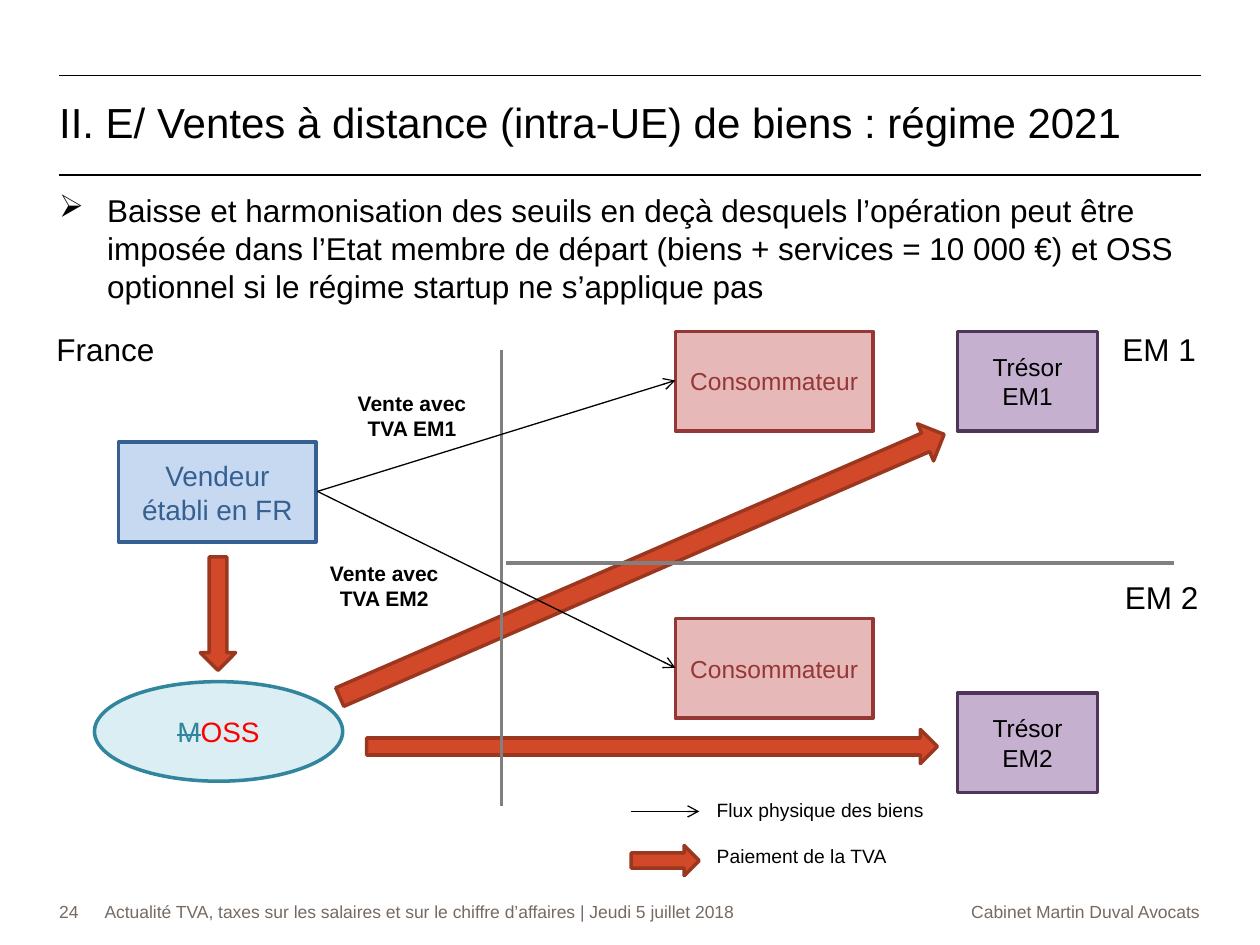
from collections import namedtuple

from lxml.etree import SubElement
from pptx import Presentation
from pptx.dml.color import RGBColor
from pptx.enum.shapes import MSO_CONNECTOR as LINK, MSO_SHAPE as SHAPE
from pptx.enum.text import MSO_ANCHOR as ANCHOR, PP_ALIGN as ALIGN
from pptx.oxml.ns import qn
from pptx.util import Inches, Pt

Box = namedtuple("Box", "left top width height")
Look = namedtuple("Look", "fill line ink size")

BLACK = RGBColor(0x00, 0x00, 0x00)
GREY = RGBColor(0x80, 0x80, 0x80)
FOOTER = RGBColor(0x76, 0x6A, 0x62)
RED = RGBColor(0xFF, 0x00, 0x00)
PAYMENT = RGBColor(0xD2, 0x49, 0x2A)
PAYMENT_EDGE = RGBColor(0x9B, 0x36, 0x1F)
ROSE, ROSE_EDGE = RGBColor(0xE6, 0xB9, 0xB8), RGBColor(0x95, 0x37, 0x35)
BLUE, BLUE_EDGE = RGBColor(0xC6, 0xD9, 0xF1), RGBColor(0x37, 0x60, 0x92)
TEAL, TEAL_EDGE = RGBColor(0xDB, 0xEE, 0xF4), RGBColor(0x31, 0x85, 0x9C)
MAUVE, MAUVE_EDGE = RGBColor(0xC6, 0xB0, 0xD0), RGBColor(0x4F, 0x35, 0x5A)

CONSUMER = Look(ROSE, ROSE_EDGE, ROSE_EDGE, 14)
SELLER = Look(BLUE, BLUE_EDGE, BLUE_EDGE, 16)
SCHEME = Look(TEAL, TEAL_EDGE, TEAL_EDGE, 16)
TREASURY = Look(MAUVE, MAUVE_EDGE, BLACK, 14)


def inside(area, left, top, width, height):
    """Return a box placed relative to the corner of an area."""
    return Box(area.left + left, area.top + top, width, height)


def add_span(para, text, size, color=BLACK, bold=False):
    """Append one formatted run to a paragraph."""
    span = para.add_run()
    span.text = text
    span.font.name = "Arial"
    span.font.size = Pt(size)
    span.font.bold = bold
    span.font.color.rgb = color
    return span


def add_text(page, box, text, size, color=BLACK, align=ALIGN.LEFT, bold=False, margins=(0.1, 0.05)):
    """Add a wrapping text box with one paragraph and return its frame."""
    frame = page.shapes.add_textbox(*map(Inches, box)).text_frame
    frame.word_wrap = True
    frame.margin_left = frame.margin_right = Inches(margins[0])
    frame.margin_top = frame.margin_bottom = Inches(margins[1])
    para = frame.paragraphs[0]
    para.alignment = align
    add_span(para, text, size, color, bold)
    return frame


def add_line(page, start, end, color=BLACK, width=0.75, arrow=False):
    """Draw a straight line, with an open arrowhead when asked."""
    line = page.shapes.add_connector(LINK.STRAIGHT, *map(Inches, start + end))
    line.line.color.rgb = color
    line.line.width = Pt(width)
    if arrow:
        SubElement(line.line._get_or_add_ln(), qn("a:tailEnd"), type="arrow")
    SubElement(line._element.spPr, qn("a:effectLst"))


def add_figure(page, kind, box, fill, edge):
    """Add a flat preset shape with a two-point outline."""
    figure = page.shapes.add_shape(kind, *map(Inches, box))
    figure.shadow.inherit = False
    figure.fill.solid()
    figure.fill.fore_color.rgb = fill
    figure.line.color.rgb = edge
    figure.line.width = Pt(2)
    return figure


def add_payment(page, box, rotation=0):
    """Add a block arrow for a VAT payment."""
    arrow = add_figure(page, SHAPE.RIGHT_ARROW, box, PAYMENT, PAYMENT_EDGE)
    arrow.rotation = rotation


def add_actor(page, box, text, look, kind=SHAPE.RECTANGLE):
    """Add a labelled party and return its paragraph."""
    frame = add_figure(page, kind, box, look.fill, look.line).text_frame
    frame.word_wrap = True
    frame.vertical_anchor = ANCHOR.MIDDLE
    para = frame.paragraphs[0]
    para.alignment = ALIGN.CENTER
    add_span(para, text, look.size, look.ink)
    return para


def build_title(page, box):
    """Set the title between its two rules."""
    for y in (box.top, box.top + box.height):
        add_line(page, (box.left, y), (box.left + box.width, y), width=1)
    title = "II. E/ Ventes à distance (intra-UE) de biens : régime 2021"
    frame = add_text(page, box, title, 24, margins=(0, 0))
    frame.vertical_anchor = ANCHOR.MIDDLE
    frame.paragraphs[0].line_spacing = Pt(24)


def build_summary(page, box):
    """Set the bulleted statement."""
    text = (
        "Baisse et harmonisation des seuils en deçà desquels l’opération peut être "
        "imposée dans l’Etat membre de départ (biens + services = 10 000 €) et OSS "
        "optionnel si le régime startup ne s’applique pas"
    )
    frame = add_text(page, box, text, 18, margins=(0, 0.13))
    props = frame.paragraphs[0]._p.get_or_add_pPr()
    indent = Inches(0.38)
    props.set("marL", str(indent))
    props.set("indent", str(-indent))
    SubElement(props, qn("a:buChar"), char="➢")


def build_diagram(page, box):
    """Draw the sellers, buyers, treasuries and the flows between them."""
    add_payment(page, inside(box, 2.56, 3.22, 4.53, 0.27))
    add_payment(page, inside(box, 2.13, 1.76, 5.23, 0.32), 336.5)
    add_payment(page, inside(box, 0.93, 2.16, 0.9, 0.28), 90)

    x, y = box.left, box.top
    add_line(page, (x + 3.63, y + 0.21), (x + 3.63, y + 3.83), GREY, 2)
    add_line(page, (x + 3.67, y + 1.9), (x + 8.97, y + 1.9), GREY, 2)

    add_text(page, inside(box, 0, 0, 1.73, 0.4), "France", 18)
    add_actor(page, inside(box, 0.59, 0.94, 1.57, 0.79), "Vendeur établi en FR", SELLER)
    scheme = add_actor(page, inside(box, 0.4, 2.84, 1.97, 0.79), "M", SCHEME, SHAPE.OVAL)
    scheme.runs[0].font._element.set("strike", "sngStrike")
    add_span(scheme, "OSS", SCHEME.size, RED)

    states = (
        ("EM 1", 0, 9.24, 0.06, 0.06, 2.27, 0.48),
        ("EM 2", 1.97, 9.26, 2.34, 2.93, 2.05, 1.83),
    )
    for name, name_top, right, buyer_top, treasury_top, sale_left, sale_top in states:
        code = name.replace(" ", "")
        add_text(page, inside(box, right - 1.6, name_top, 1.6, 0.4), name, 18, align=ALIGN.RIGHT)
        add_actor(page, inside(box, 5.01, buyer_top, 1.57, 0.79), "Consommateur", CONSUMER)
        add_actor(page, inside(box, 7.25, treasury_top, 1.11, 0.79), f"Trésor {code}", TREASURY)
        add_line(page, (x + 2.17, y + 1.33), (x + 5.01, y + buyer_top + 0.39), arrow=True)
        sale = inside(box, sale_left, sale_top, 1.3, 0.5)
        add_text(page, sale, f"Vente avec TVA {code}", 12, align=ALIGN.CENTER, bold=True)


def build_legend(page, box):
    """Explain the two kinds of arrow."""
    y = box.top + 0.15
    add_line(page, (box.left, y), (box.left + 0.54, y), arrow=True)
    add_payment(page, inside(box, 0, 0.42, 0.54, 0.24))
    words = inside(box, 0.58, 0, box.width - 0.58, box.height)
    frame = add_text(page, words, "Flux physique des biens", 11)
    para = frame.add_paragraph()
    para.space_before = Pt(13)
    add_span(para, "Paiement de la TVA", 11)


def build_footer(page, box):
    """Set the page number, the event and the firm."""
    parts = (
        (0, 0.35, "24", ALIGN.LEFT),
        (0.36, 6.43, "Actualité TVA, taxes sur les salaires et sur le chiffre d’affaires | Jeudi 5 juillet 2018", ALIGN.LEFT),
        (box.width - 4.52, 4.52, "Cabinet Martin Duval Avocats", ALIGN.RIGHT),
    )
    for left, width, text, align in parts:
        add_text(page, inside(box, left, 0, width, box.height), text, 10, FOOTER, align, margins=(0, 0))


def main():
    """Build and save the deck."""
    deck = Presentation()
    deck.slide_width, deck.slide_height = Inches(10), Inches(7.5)
    page = deck.slides.add_slide(deck.slide_layouts[6])
    build_title(page, Box(0.47, 0.6, 9.06, 0.79))
    build_summary(page, Box(0.47, 1.39, 9.06, 1.1))
    build_diagram(page, Box(0.35, 2.57, 9.26, 3.83))
    build_legend(page, Box(5.01, 6.29, 2.75, 0.66))
    build_footer(page, Box(0.47, 7.15, 9.05, 0.28))
    deck.save("out.pptx")


if __name__ == "__main__":
    main()
